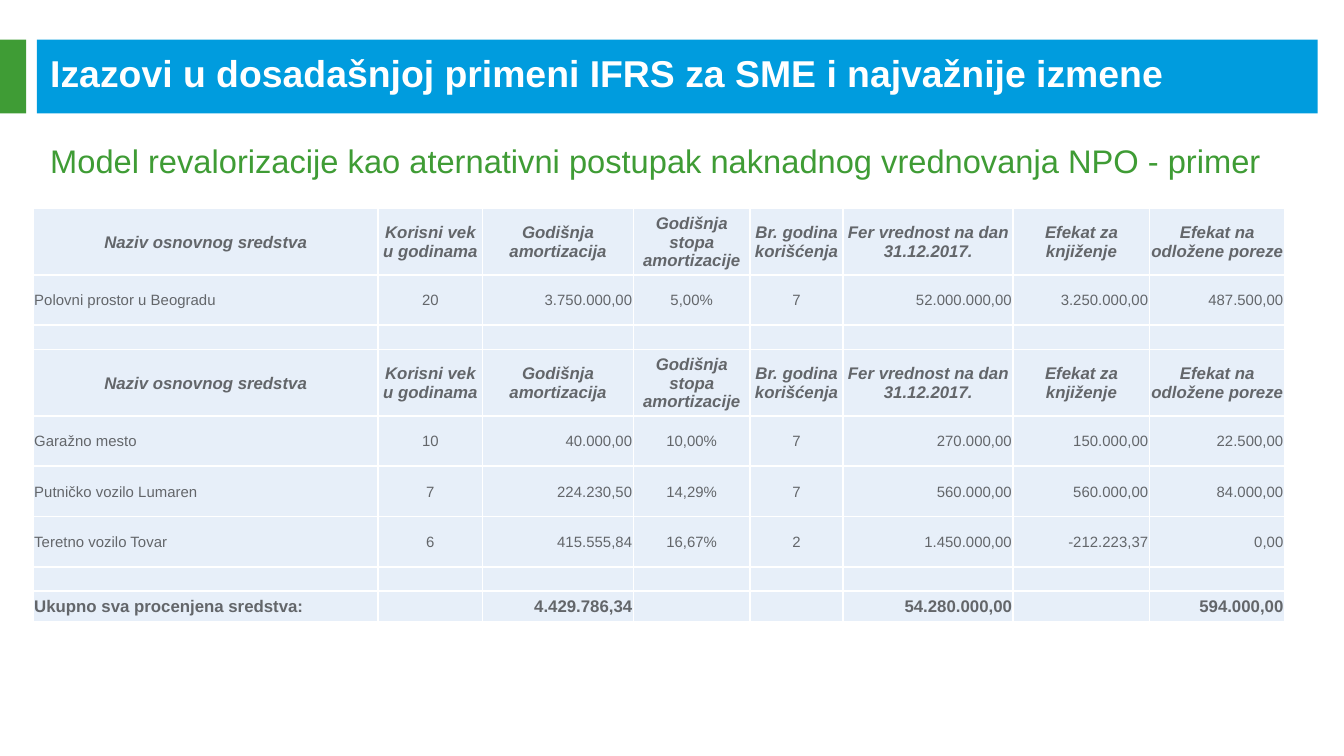
from lxml import etree
from pptx import Presentation
from pptx.dml.color import RGBColor
from pptx.enum.shapes import MSO_SHAPE
from pptx.enum.text import MSO_ANCHOR, PP_ALIGN
from pptx.oxml.ns import qn
from pptx.util import Emu, Pt

RECT = MSO_SHAPE.RECTANGLE
TOP, MIDDLE = MSO_ANCHOR.TOP, MSO_ANCHOR.MIDDLE
LEFT, CENTER, RIGHT = PP_ALIGN.LEFT, PP_ALIGN.CENTER, PP_ALIGN.RIGHT

SCALE = 4572  # EMU per px, 200 px to the inch
FONT = "Arial"
BLUE, GREEN, WHITE = "009CDE", "3F9C35", "FFFFFF"
GREY, PALE = "63666A", "E7EFF9"

COLS = [514, 155, 225, 173, 139, 253, 203, 201]
ALIGNS = [LEFT, CENTER, RIGHT, CENTER, CENTER, RIGHT, RIGHT, RIGHT]
HEADS = ["Naziv osnovnog sredstva", "Korisni vek u godinama",
         "Godišnja amortizacija", "Godišnja stopa amortizacije",
         "Br. godina korišćenja", "Fer vrednost na dan 31.12.2017.",
         "Efekat za knjiženje", "Efekat na odložene poreze"]
BLANK = [""] * len(COLS)

# Kind of row: height, text size, bold, italic
KINDS = {
    "head": (99, 9, True, True),
    "item": (75, 8, False, False),
    "gap": (36, 8, False, False),
    "sum": (45, 9, True, False),
}
ROWS = [
    ("head", HEADS),
    ("item", ["Polovni prostor u Beogradu", "20", "3.750.000,00", "5,00%", "7",
              "52.000.000,00", "3.250.000,00", "487.500,00"]),
    ("gap", BLANK),
    ("head", HEADS),
    ("item", ["Garažno mesto", "10", "40.000,00", "10,00%", "7",
              "270.000,00", "150.000,00", "22.500,00"]),
    ("item", ["Putničko vozilo Lumaren", "7", "224.230,50", "14,29%", "7",
              "560.000,00", "560.000,00", "84.000,00"]),
    ("item", ["Teretno vozilo Tovar", "6", "415.555,84", "16,67%", "2",
              "1.450.000,00", "-212.223,37", "0,00"]),
    ("gap", BLANK),
    ("sum", ["Ukupno sva procenjena sredstva:", "", "4.429.786,34", "", "",
             "54.280.000,00", "", "594.000,00"]),
]


def px(n):
    return Emu(n * SCALE)


def color(code):
    return RGBColor.from_string(code)


def add_run(para, text, size, code, bold=False, italic=False):
    run = para.add_run()
    run.text = text
    font = run.font
    font.name, font.size = FONT, Pt(size)
    font.bold, font.italic = bold, italic
    font.color.rgb = color(code)


def add_bar(slide, x, y, w, h, code):
    bar = slide.shapes.add_shape(RECT, px(x), px(y), px(w), px(h))
    bar.shadow.inherit = False
    bar.fill.solid()
    bar.fill.fore_color.rgb = color(code)
    bar.line.fill.background()


def add_text(slide, x, y, w, h, text, size, code, bold=False, anchor=TOP):
    box = slide.shapes.add_textbox(px(x), px(y), px(w), px(h))
    frame = box.text_frame
    frame.word_wrap = True
    frame.vertical_anchor = anchor
    add_run(frame.paragraphs[0], text, size, code, bold)


def add_edges(cell):
    props = cell._tc.get_or_add_tcPr()
    for i, side in enumerate(("a:lnL", "a:lnR", "a:lnT", "a:lnB")):
        line = etree.Element(qn(side), w=str(Pt(1)))
        fill = etree.SubElement(line, qn("a:solidFill"))
        etree.SubElement(fill, qn("a:srgbClr"), val=WHITE)
        props.insert(i, line)


def fill_cell(cell, text, align, size, bold, italic):
    cell.fill.solid()
    cell.fill.fore_color.rgb = color(PALE)
    add_edges(cell)
    cell.vertical_anchor = MIDDLE
    cell.margin_left = cell.margin_right = cell.margin_top = px(2)
    cell.margin_bottom = 0
    para = cell.text_frame.paragraphs[0]
    para.alignment = align
    if text:
        add_run(para, text, size, GREY, bold, italic)
    else:  # keeps an empty row from growing
        etree.SubElement(para._p, qn("a:endParaRPr"), sz=str(size * 100))


def add_grid(slide, x, y):
    highs = [KINDS[kind][0] for kind, _ in ROWS]
    frame = slide.shapes.add_table(len(ROWS), len(COLS), px(x), px(y),
                                   px(sum(COLS)), px(sum(highs)))
    table = frame.table
    for col, wide in zip(table.columns, COLS):
        col.width = px(wide)
    for r, (kind, texts) in enumerate(ROWS):
        high, size, bold, italic = KINDS[kind]
        table.rows[r].height = px(high)
        for c, text in enumerate(texts):
            align = CENTER if kind == "head" else ALIGNS[c]
            fill_cell(table.cell(r, c), text, align, size, bold, italic)


def main():
    prs = Presentation()
    prs.slide_width, prs.slide_height = px(2000), px(1125)
    slide = prs.slides.add_slide(prs.slide_layouts[6])

    # Title band
    add_bar(slide, 55, 59, 1906, 110, BLUE)
    add_bar(slide, 0, 59, 39, 110, GREEN)
    add_text(slide, 55, 78, 1890, 60,
             "Izazovi u dosadašnjoj primeni IFRS za SME i najvažnije izmene",
             20, WHITE, True, MIDDLE)

    # Subtitle
    add_text(slide, 55, 200, 1906, 106,
             "Model revalorizacije kao aternativni postupak naknadnog "
             "vrednovanja NPO - primer", 17.5, GREEN)

    # Table of assets
    add_grid(slide, 49, 310)
    prs.save("out.pptx")


if __name__ == "__main__":
    main()
